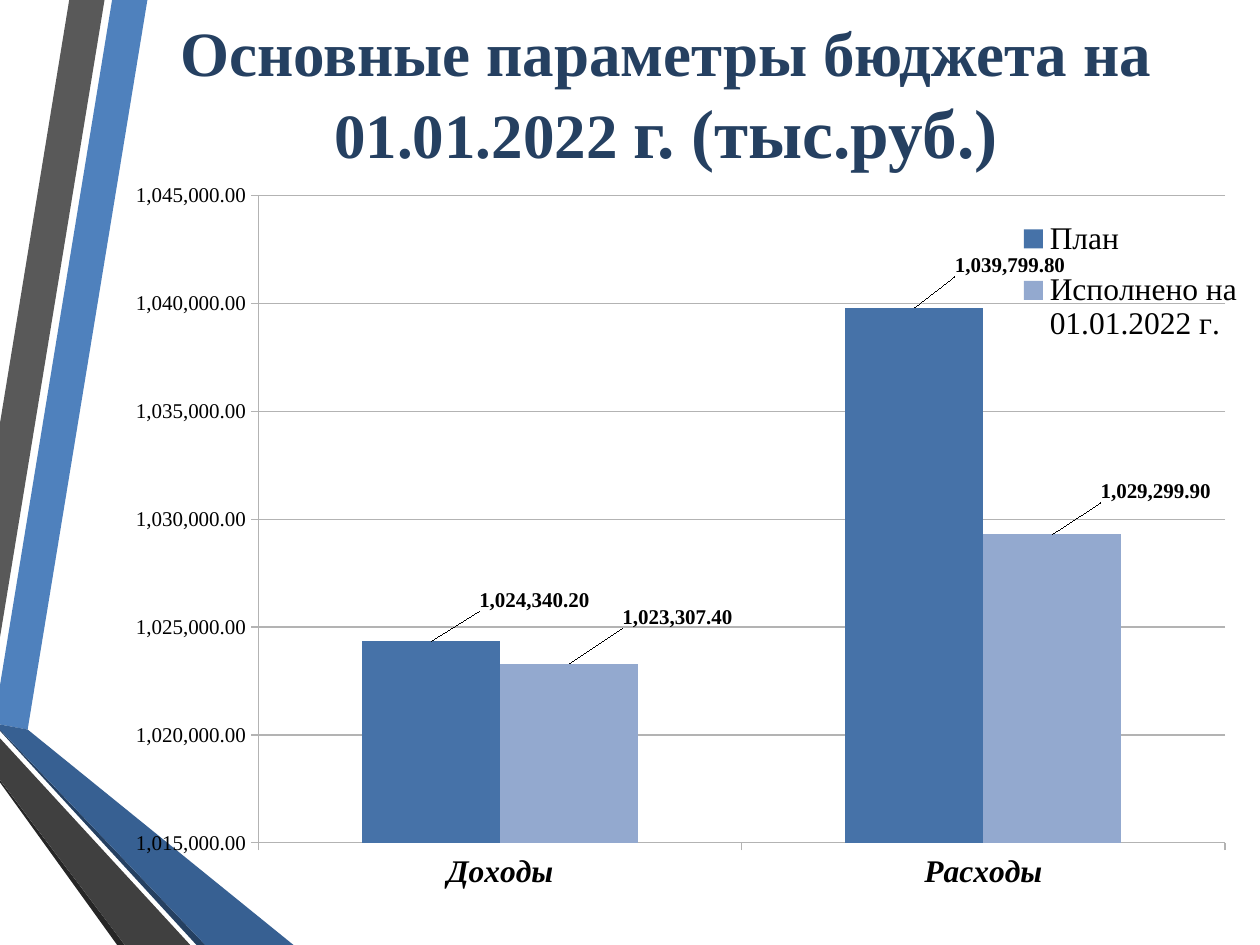
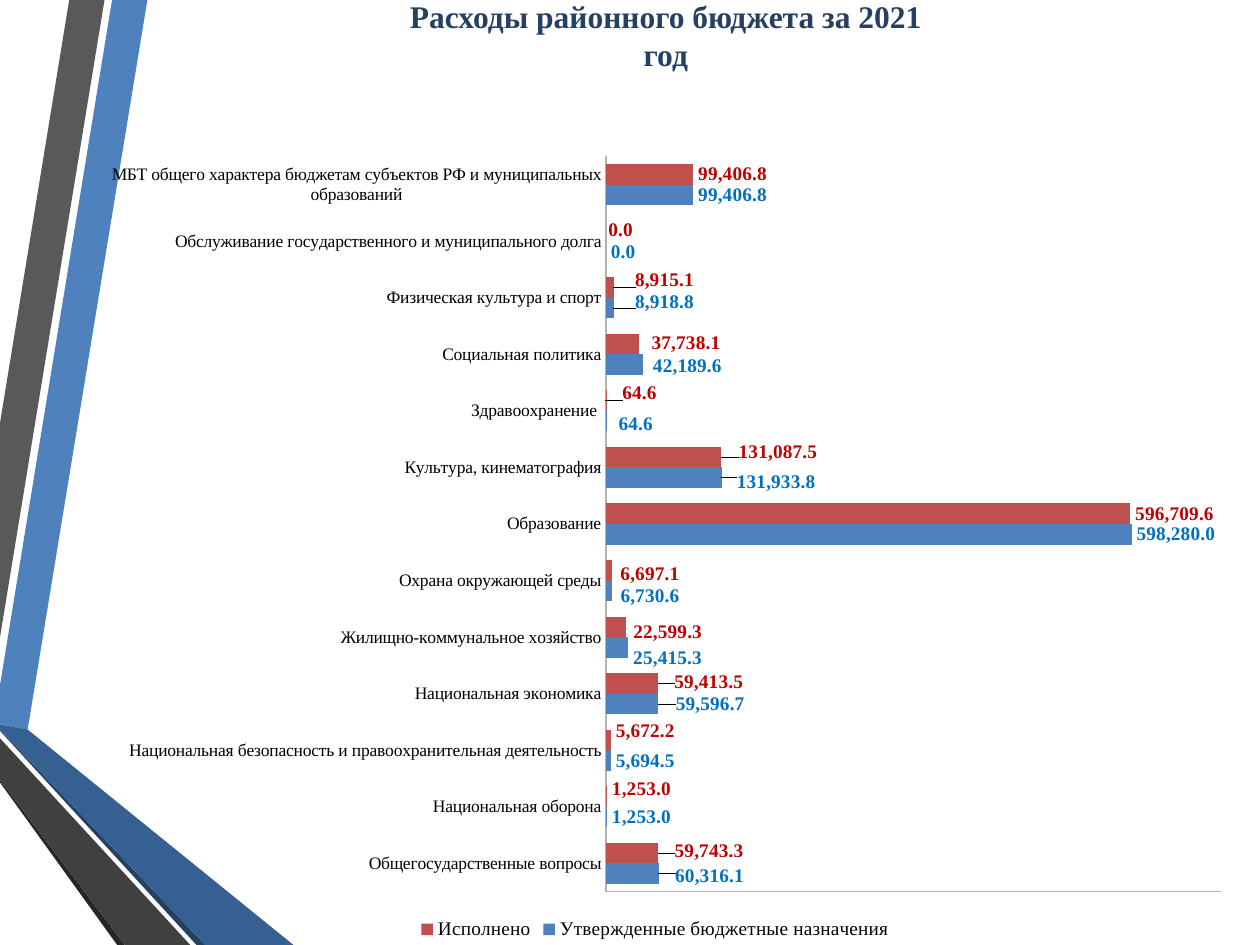
import pptx
import pptx.util
import pptx.chart.data
import pptx.dml.color
import pptx.enum.chart
import pptx.enum.text
import pptx.oxml
import pptx.oxml.ns

PX = 9144
FONT = "Times New Roman"
RGB = pptx.dml.color.RGBColor
BLACK = RGB(0x00, 0x00, 0x00)
GRID = RGB(0xB3, 0xB3, 0xB3)
NAVY = RGB(0x25, 0x40, 0x61)
DEEP_BLUE = RGB(0x37, 0x60, 0x92)
BLUE = RGB(0x4F, 0x81, 0xBD)
RED = RGB(0xC0, 0x50, 0x4D)
PLAN_BLUE = RGB(0x46, 0x72, 0xA8)
DONE_BLUE = RGB(0x93, 0xA9, 0xCF)
LABEL_BLUE = RGB(0x00, 0x70, 0xC0)
LABEL_RED = RGB(0xC0, 0x00, 0x00)
GREY = RGB(0x59, 0x59, 0x59)
DARK_GREY = RGB(0x40, 0x40, 0x40)
CHARCOAL = RGB(0x26, 0x26, 0x26)

RIBBONS = [
    (BLUE, [(0, 544), (0, 575), (22, 579), (117, 0), (89, 0)]),
    (GREY, [(83, 0), (55, 0), (0, 336), (0, 506)]),
    (CHARCOAL, [(0, 619), (0, 621), (93, 750), (99, 750)]),
    (NAVY, [(0, 579), (0, 580), (156, 750), (163, 750)]),
    (DEEP_BLUE, [(0, 579), (163, 750), (233, 750), (22, 579), (0, 575)]),
    (DARK_GREY, [(0, 619), (99, 750), (151, 750), (0, 586)]),
]

TOTALS_CATEGORIES = ["Доходы", "Расходы"]
TOTALS = [
    ("План", [1024340.2, 1039799.8], PLAN_BLUE, BLACK,
     {0: (82, -20), 1: (76, -21)}),
    ("Исполнено на 01.01.2022 г.", [1023307.4, 1029299.9], DONE_BLUE, BLACK,
     {0: (86, -24), 1: (82, -21)}),
]

EXPENSE_CATEGORIES = [
    "Общегосударственные вопросы",
    "Национальная оборона",
    "Национальная безопасность и правоохранительная деятельность",
    "Национальная экономика",
    "Жилищно-коммунальное хозяйство",
    "Охрана окружающей среды",
    "Образование",
    "Культура, кинематография",
    "Здравоохранение ",
    "Социальная политика",
    "Физическая культура и спорт",
    "Обслуживание государственного и муниципального долга",
    "МБТ общего характера бюджетам субъектов РФ и муниципальных образований",
]
EXPENSES = [
    ("Утвержденные бюджетные назначения",
     [60316.1, 1253, 5694.5, 59596.7, 25415.3, 6730.6, 598280,
      131933.8, 64.6, 42189.6, 8918.8, 0, 99406.8],
     BLUE, LABEL_BLUE,
     {0: (9, 2), 3: (10, 0), 4: (0, 8), 5: (3, 4), 7: (8, 3),
      8: (6, 2), 9: (4, 1), 10: (13, -5)}),
    ("Исполнено",
     [59743.3, 1253, 5672.2, 59413.5, 22599.3, 6697.1, 596709.6,
      131087.5, 64.6, 37738.1, 8915.1, 0, 99406.8],
     RED, LABEL_RED,
     {0: (9, -2), 1: (0, -6), 2: (0, -7), 3: (9, -1), 4: (2, 4), 5: (3, 3),
      7: (10, -4), 8: (9, -6), 9: (6, -1), 10: (13, -6), 11: (-2, -1)}),
]


def set_font(font, size, color=BLACK, bold=False, italic=False):
    font.name = FONT
    font.size = pptx.util.Pt(size)
    font.color.rgb = color
    font.bold = bold
    font.italic = italic


def set_layout(parent, index, **fields):
    for old in parent.findall(pptx.oxml.ns.qn("c:layout")):
        parent.remove(old)
    items = "".join(f'<c:{k} val="{v}"/>' for k, v in fields.items())
    parent.insert(index, pptx.oxml.parse_xml(
        f'<c:layout {pptx.oxml.ns.nsdecls("c")}>'
        f"<c:manualLayout>{items}</c:manualLayout></c:layout>"))


def set_box_layout(parent, index, box, **target):
    x, y, w, h = box
    set_layout(parent, index, **target, xMode="edge", yMode="edge",
               x=x, y=y, w=w, h=h)


def add_ribbons(s):
    for color, points in RIBBONS:
        builder = s.shapes.build_freeform(*points[0], scale=PX)
        builder.add_line_segments(points[1:], close=True)
        sp = builder.convert_to_shape()
        sp.shadow.inherit = False
        sp.fill.solid()
        sp.fill.fore_color.rgb = color
        sp.line.fill.background()


def add_title(s, height, parts):
    sp = s.shapes.add_textbox(107 * PX, 0, 843 * PX, height * PX)
    tf = sp.text_frame
    tf.word_wrap = True
    tf.vertical_anchor = pptx.enum.text.MSO_ANCHOR.MIDDLE
    p = tf.paragraphs[0]
    p.alignment = pptx.enum.text.PP_ALIGN.CENTER
    for text, size in parts:
        if p.runs:
            p.add_run().text = text
        else:
            p.text = text
        for r in p.runs:
            if r.font.size is None:
                set_font(r.font, size, NAVY, bold=True)


def add_labels(series, color, size, number_format, offsets, width, height):
    labels = series.data_labels
    labels.show_value = True
    labels.number_format = number_format
    labels.number_format_is_linked = False
    labels.position = pptx.enum.chart.XL_LABEL_POSITION.OUTSIDE_END
    set_font(labels.font, size, color, bold=True)
    for i, (dx, dy) in offsets.items():
        label = series.points[i].data_label
        set_font(label.font, size, color, bold=True)
        label.position = pptx.enum.chart.XL_LABEL_POSITION.OUTSIDE_END
        dlbl = series.data_labels._element.xpath(f"c:dLbl[c:idx/@val={i}]")[0]
        set_layout(dlbl, 1, x=round(dx / width, 4), y=round(dy / height, 4))


def add_bar_chart(s, box, kind, categories, rows, number_format, plot_box,
                  gap, label_size, limits, legend_position, legend_size):
    data = pptx.chart.data.CategoryChartData(number_format=number_format)
    data.categories = categories
    for name, values, *_ in rows:
        data.add_series(name, values)
    frame = s.shapes.add_chart(kind, *(v * PX for v in box), data)
    chart = frame.chart
    chart.has_title = False
    set_font(chart.font, 18)
    plot = chart.plots[0]
    plot.gap_width = gap
    plot.overlap = 0
    plot.vary_by_categories = False
    for series, (_, _, fill, label_color, offsets) in zip(plot.series, rows):
        series.format.fill.solid()
        series.format.fill.fore_color.rgb = fill
        series.invert_if_negative = False
        add_labels(series, label_color, label_size, number_format, offsets,
                   *box[2:])
    for axis in (chart.category_axis, chart.value_axis):
        axis.format.line.color.rgb = GRID
        axis.minor_tick_mark = pptx.enum.chart.XL_TICK_MARK.NONE
    axis = chart.value_axis
    axis.minimum_scale, axis.maximum_scale, axis.major_unit = limits
    axis.tick_labels.number_format = number_format
    axis.tick_labels.number_format_is_linked = False
    chart.has_legend = True
    chart.legend.position = legend_position
    chart.legend.include_in_layout = False
    set_font(chart.legend.font, legend_size)
    plot_area = chart._chartSpace.chart.plotArea
    set_box_layout(plot_area, 0, plot_box, layoutTarget="inner")
    return chart


def add_totals_slide(prs):
    s = prs.slides.add_slide(prs.slide_layouts[6])
    add_ribbons(s)
    add_title(s, 147, [("Основные параметры бюджета на\v01.01.2022 ", 36),
                       ("г. (тыс.руб.)", 39.6)])
    chart = add_bar_chart(
        s, (107, 139, 893, 583),
        pptx.enum.chart.XL_CHART_TYPE.COLUMN_CLUSTERED,
        TOTALS_CATEGORIES, TOTALS, "#,##0.00", (0.11, 0.028, 0.859, 0.881),
        150, 12, (1015000, 1045000, 5000),
        pptx.enum.chart.XL_LEGEND_POSITION.RIGHT, 18)
    set_font(chart.category_axis.tick_labels.font, 18, bold=True, italic=True)
    set_font(chart.value_axis.tick_labels.font, 12)
    for axis in (chart.category_axis, chart.value_axis):
        axis.major_tick_mark = pptx.enum.chart.XL_TICK_MARK.OUTSIDE
    chart.value_axis.has_major_gridlines = True
    chart.value_axis.major_gridlines.format.line.color.rgb = GRID
    set_box_layout(chart.legend._element, 1, (0.78, 0.04, 0.21, 0.21))


def add_expenses_slide(prs):
    s = prs.slides.add_slide(prs.slide_layouts[6])
    add_ribbons(s)
    add_title(s, 86, [("Расходы районного бюджета за 2021\v год \v", 18)])
    chart = add_bar_chart(
        s, (55, 102, 930, 648),
        pptx.enum.chart.XL_CHART_TYPE.BAR_CLUSTERED,
        EXPENSE_CATEGORIES, EXPENSES, "#,##0.0",
        (0.458, 0.034, 0.525, 0.901), 75, 11, (0, 700000, 100000),
        pptx.enum.chart.XL_LEGEND_POSITION.BOTTOM, 11)
    set_font(chart.category_axis.tick_labels.font, 10)
    for axis in (chart.category_axis, chart.value_axis):
        axis.major_tick_mark = pptx.enum.chart.XL_TICK_MARK.NONE
    chart.value_axis.has_major_gridlines = False
    chart.value_axis.tick_label_position = (
        pptx.enum.chart.XL_TICK_LABEL_POSITION.NONE)


def main():
    prs = pptx.Presentation()
    prs.slide_width = 1000 * PX
    prs.slide_height = 750 * PX
    add_totals_slide(prs)
    add_expenses_slide(prs)
    prs.save("out.pptx")


if __name__ == "__main__":
    main()
